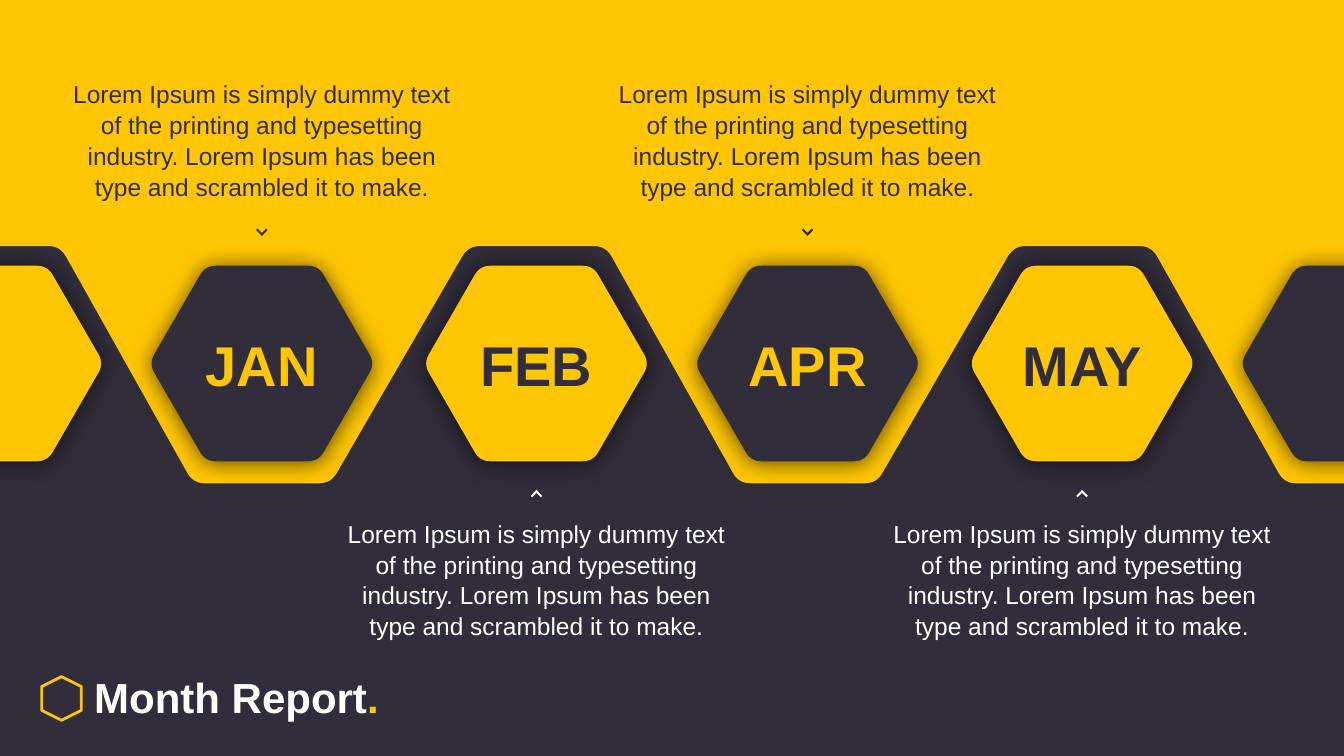
from dataclasses import dataclass
from math import cos, hypot, radians, sin

from lxml.etree import SubElement
from pptx import Presentation
from pptx.dml.color import RGBColor
from pptx.enum.shapes import MSO_SHAPE as Preset
from pptx.enum.text import MSO_ANCHOR as Anchor, MSO_AUTO_SIZE as AutoSize, PP_ALIGN as Align
from pptx.oxml.ns import qn
from pptx.slide import Slide
from pptx.util import Cm, Pt

YELLOW, DARK, WHITE = "FFC601", "312D3A", "FFFFFF"
WIDTH, HEIGHT = 67.74, 38.1
PERIOD = 27.5
BAND_TOP, BAND_BOTTOM = 12.4, 24.36
HEX_RADIUS, HEX_Y = 5.69, 18.32
BLURB = (
    "Lorem Ipsum is simply dummy text of the printing and typesetting industry. "
    "Lorem Ipsum has been type and scrambled it to make."
)
MONTHS = ["", "JAN", "FEB", "APR", "MAY", ""]


def rgb(color):
    return RGBColor.from_string(color)


def write(frame, *parts, size, bold=False, align=Align.CENTER, anchor=Anchor.TOP,
          wrap=True, spacing=1.0):
    frame.word_wrap = wrap
    frame.auto_size = AutoSize.NONE
    frame.vertical_anchor = anchor
    frame.margin_left = frame.margin_right = Cm(0.15)
    frame.margin_top = frame.margin_bottom = Cm(0.15)
    paragraph = frame.paragraphs[0]
    paragraph.alignment = align
    paragraph.line_spacing = spacing
    for words, color in parts:
        run = paragraph.add_run()
        run.text = words
        run.font.name = "Arial"
        run.font.size = Pt(size)
        run.font.bold = bold
        run.font.color.rgb = rgb(color)


def toward(start, end, distance):
    share = distance / hypot(end[0] - start[0], end[1] - start[1])
    return tuple(a + (b - a) * share for a, b in zip(start, end))


def round_corners(corners, trim, steps=8):
    outline = []
    for i, corner in enumerate(corners):
        before = toward(corner, corners[i - 1], trim)
        after = toward(corner, corners[(i + 1) % len(corners)], trim)
        for t in (step / steps for step in range(steps + 1)):
            outline.append(tuple(
                (1 - t) ** 2 * a + 2 * t * (1 - t) * b + t ** 2 * c
                for a, b, c in zip(before, corner, after)
            ))
    return outline


@dataclass
class Timeline:
    slide: Slide
    text_size: int = 35
    month_size: int = 80
    title_size: int = 60

    def background(self, color):
        fill = self.slide.background.fill
        fill.solid()
        fill.fore_color.rgb = rgb(color)

    def title(self, *parts):
        heading = self.slide.shapes.title
        heading.left, heading.top = Cm(4.6), Cm(33.68)
        heading.width, heading.height = Cm(14.76), Cm(2.84)
        write(heading.text_frame, *parts, size=self.title_size, bold=True,
              align=Align.LEFT, anchor=Anchor.MIDDLE, wrap=False)

    def emblem(self, x, y):
        badge = self.slide.shapes.add_shape(
            Preset.HEXAGON, Cm(x - 1.1), Cm(y - 1), Cm(2.2), Cm(2))
        badge.rotation = 90
        badge.shadow.inherit = False
        badge.fill.background()
        badge.line.color.rgb = rgb(YELLOW)
        badge.line.width = Pt(4)

    def outline(self, points, color):
        start, *rest = [(Cm(x), Cm(y)) for x, y in points]
        builder = self.slide.shapes.build_freeform(*start)
        builder.add_line_segments(rest, close=True)
        area = builder.convert_to_shape()
        area.shadow.inherit = False
        area.fill.solid()
        area.fill.fore_color.rgb = rgb(color)
        area.line.fill.background()
        return area

    def band(self):
        zigzag = [(-PERIOD, BAND_TOP)]
        for start in (0, PERIOD, 2 * PERIOD):
            zigzag += [(start + 3.03, BAND_TOP), (start + 9.74, BAND_BOTTOM),
                       (start + 16.67, BAND_BOTTOM), (start + 23.6, BAND_TOP)]
        rounded = round_corners(zigzag + [(3 * PERIOD, -PERIOD), (-PERIOD, -PERIOD)], 0.6)
        edge = [(x, y) for x, y in rounded if 0 <= x <= WIDTH and y > 0]
        self.outline([(0, 0), (0, BAND_TOP), *edge, (WIDTH, BAND_BOTTOM), (WIDTH, 0)], YELLOW)

    def hexagon(self, x, color):
        corners = [(x + HEX_RADIUS * cos(radians(angle)), HEX_Y + HEX_RADIUS * sin(radians(angle)))
                   for angle in range(0, 360, 60)]
        tile = self.outline(round_corners(corners, 0.53), color)
        effects = tile.element.spPr.find(qn("a:effectLst"))
        shadow = SubElement(effects, qn("a:outerShdw"), blurRad=str(Pt(32)),
                            dist=str(Pt(2)), dir="5400000", algn="ctr", rotWithShape="0")
        tint = SubElement(shadow, qn("a:srgbClr"), val="000000")
        SubElement(tint, qn("a:alpha"), val="62000")

    def textbox(self, x, y, width, height, words, color, **style):
        box = self.slide.shapes.add_textbox(Cm(x - width / 2), Cm(y), Cm(width), Cm(height))
        write(box.text_frame, (words, color), **style)

    def month(self, x, name, color):
        self.textbox(x, 16.48, 9.07, 3.71, name, color, size=self.month_size,
                     bold=True, anchor=Anchor.MIDDLE)

    def blurb(self, x, y, color):
        self.textbox(x, y, 19.4, 6.25, BLURB, color, size=self.text_size, spacing=1.05)

    def chevron(self, x, y, direction, color):
        offsets = [(0.29, -0.11), (0.22, -0.18), (0, 0.04),
                   (-0.22, -0.18), (-0.29, -0.11), (0, 0.19)]
        self.outline([(x + dx, y + direction * dy) for dx, dy in offsets], color)


def main():
    deck = Presentation()
    deck.slide_width, deck.slide_height = Cm(WIDTH), Cm(HEIGHT)
    timeline = Timeline(deck.slides.add_slide(deck.slide_layouts[5]))
    timeline.background(DARK)
    timeline.emblem(3.1, 35.2)
    timeline.title(("Month Report", WHITE), (".", YELLOW))
    timeline.band()
    for i, month in enumerate(MONTHS):
        cycle, upper = divmod(i, 2)
        x = cycle * PERIOD + (13.2 if upper else -0.46)
        tile, label = (DARK, YELLOW) if upper else (YELLOW, DARK)
        timeline.hexagon(x, tile)
        if not month:
            continue
        timeline.month(x, month, label)
        if upper:
            timeline.blurb(x, 3.76, DARK)
            timeline.chevron(x, 11.7, 1, DARK)
        else:
            timeline.blurb(x, 25.92, WHITE)
            timeline.chevron(x, 24.88, -1, WHITE)
    deck.save("out.pptx")


if __name__ == "__main__":
    main()
